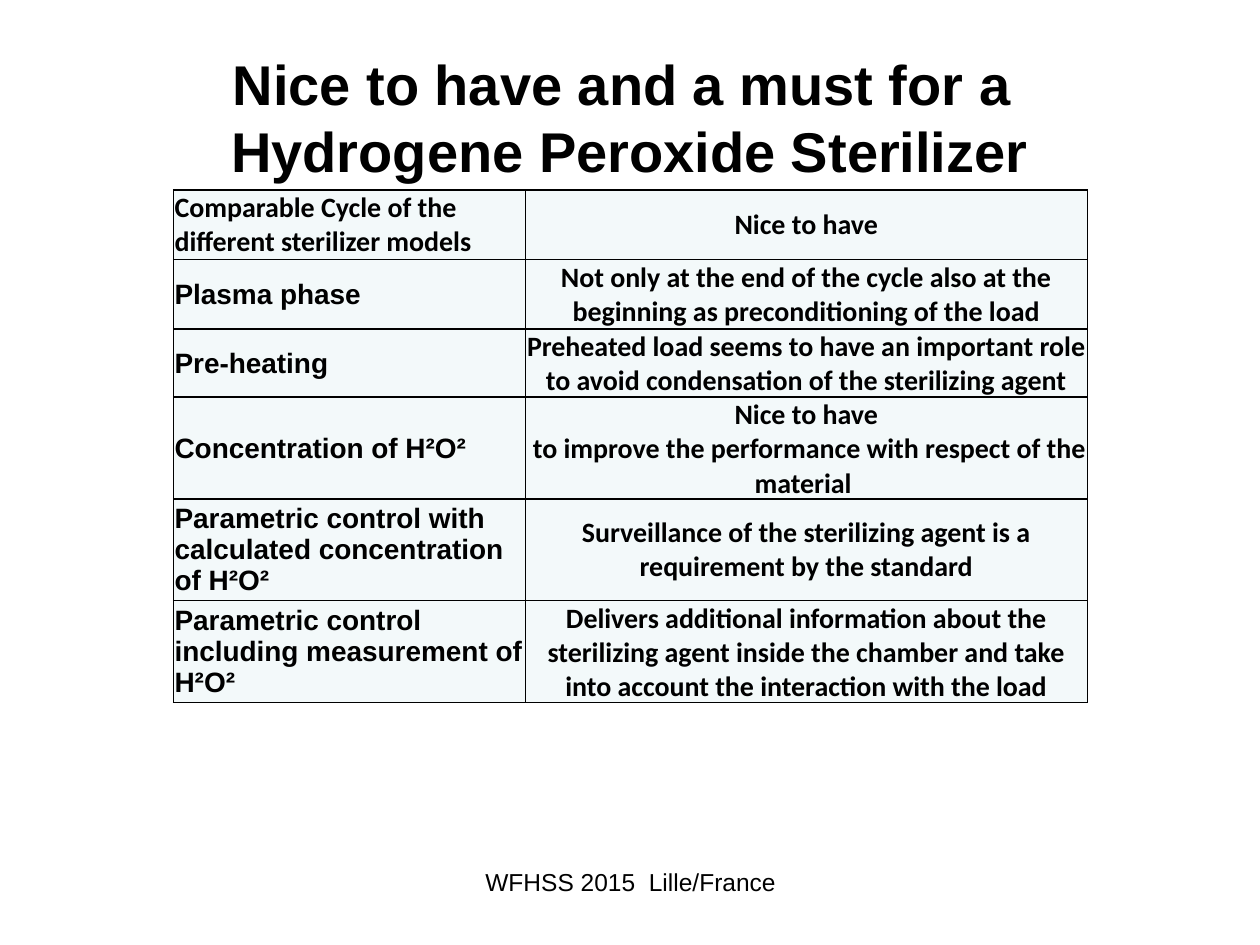
from lxml.etree import SubElement
from pptx import Presentation
from pptx.dml.color import RGBColor
from pptx.enum.text import MSO_ANCHOR, PP_ALIGN
from pptx.oxml.ns import qn
from pptx.util import Cm, Pt

BLACK = "000000"
CELL_FILL = "F3F9FA"
COLUMN_WIDTHS = [7.09, 11.33]
ROW_HEIGHTS = [1.4, 1.4, 1.19, 1.88, 1.88, 1.88]
# Label, label font, remarks (one per paragraph)
ROWS = [
    ("Comparable Cycle of the different sterilizer models", "Calibri", ["Nice to have"]),
    ("Plasma phase", "Arial",
     ["Not only at the end of the cycle also at the beginning as preconditioning of the load"]),
    ("Pre-heating", "Arial",
     ["Preheated load seems to have an important role to avoid condensation of the sterilizing agent"]),
    ("Concentration of H²O²", "Arial",
     ["Nice to have", " to improve the performance with respect of the material "]),
    ("Parametric control with calculated concentration of H²O²", "Arial",
     ["Surveillance of the sterilizing agent is a requirement by the standard"]),
    ("Parametric control including measurement of H²O²", "Arial",
     ["Delivers additional information about the sterilizing agent inside the chamber "
      "and take into account the interaction with the load"]),
]


def color(value):
    return RGBColor.from_string(value)


def add_span(para, text, size, font="Arial", bold=False):
    span = para.add_run()
    span.text = text
    span.font.name = font
    span.font.size = Pt(size)
    span.font.bold = bold
    span.font.color.rgb = color(BLACK)


def place(shape, left, top, width, height):
    shape.left, shape.top = Cm(left), Cm(top)
    shape.width, shape.height = Cm(width), Cm(height)


def fill_title(title, left, top, width, height):
    place(title, left, top, width, height)
    frame = title.text_frame
    frame.vertical_anchor = MSO_ANCHOR.MIDDLE
    para = frame.paragraphs[0]
    para.alignment = PP_ALIGN.CENTER
    add_span(para, "Nice to have and a must for a ", 32, bold=True)
    para.add_line_break()
    add_span(para, "Hydrogene Peroxide Sterilizer", 32, bold=True)


def add_borders(cell):
    properties = cell._tc.get_or_add_tcPr()
    for side in ("lnL", "lnR", "lnT", "lnB"):
        line = SubElement(properties, qn(f"a:{side}"), w=str(Pt(1)))
        solid = SubElement(line, qn("a:solidFill"))
        SubElement(solid, qn("a:srgbClr"), val=BLACK)


def fill_cell(cell, texts, font, alignment):
    # Borders precede the fill in the cell properties
    add_borders(cell)
    cell.fill.solid()
    cell.fill.fore_color.rgb = color(CELL_FILL)
    cell.vertical_anchor = MSO_ANCHOR.MIDDLE
    cell.margin_left = cell.margin_right = cell.margin_top = Cm(0.02)
    cell.margin_bottom = 0
    frame = cell.text_frame
    for index, text in enumerate(texts):
        para = frame.add_paragraph() if index else frame.paragraphs[0]
        para.alignment = alignment
        add_span(para, text, 16, font, bold=True)


def add_requirements(page, left, top):
    table = page.shapes.add_table(
        len(ROWS), len(COLUMN_WIDTHS), Cm(left), Cm(top),
        Cm(sum(COLUMN_WIDTHS)), Cm(sum(ROW_HEIGHTS))).table
    for column, width in zip(table.columns, COLUMN_WIDTHS):
        column.width = Cm(width)
    for row, height, (label, font, remarks) in zip(table.rows, ROW_HEIGHTS, ROWS):
        row.height = Cm(height)
        fill_cell(row.cells[0], [label], font, PP_ALIGN.LEFT)
        fill_cell(row.cells[1], remarks, "Calibri", PP_ALIGN.CENTER)


def add_footer(page, left, top, width, height):
    box = page.shapes.add_textbox(Cm(left), Cm(top), Cm(width), Cm(height))
    box.text_frame.word_wrap = True
    para = box.text_frame.paragraphs[0]
    para.alignment = PP_ALIGN.CENTER
    add_span(para, "WFHSS 2015  Lille/France", 14)


def main():
    deck = Presentation()
    deck.slide_width, deck.slide_height = Cm(25.4), Cm(19.05)
    page = deck.slides.add_slide(deck.slide_layouts[5])
    fill_title(page.shapes.title, 1.27, 0.76, 22.86, 3.18)
    add_footer(page, 8.69, 17.35, 8.05, 1.32)
    add_requirements(page, 3.5, 3.83)
    deck.save("out.pptx")


if __name__ == "__main__":
    main()
